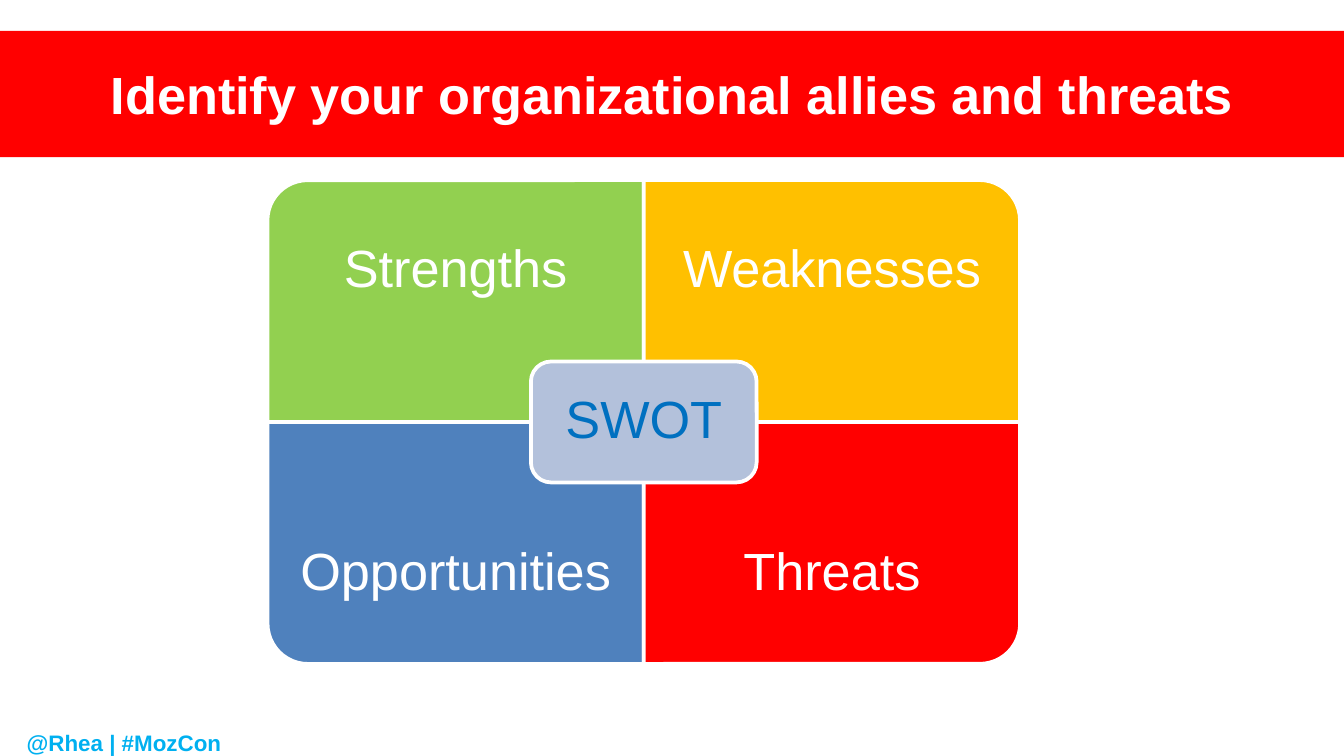
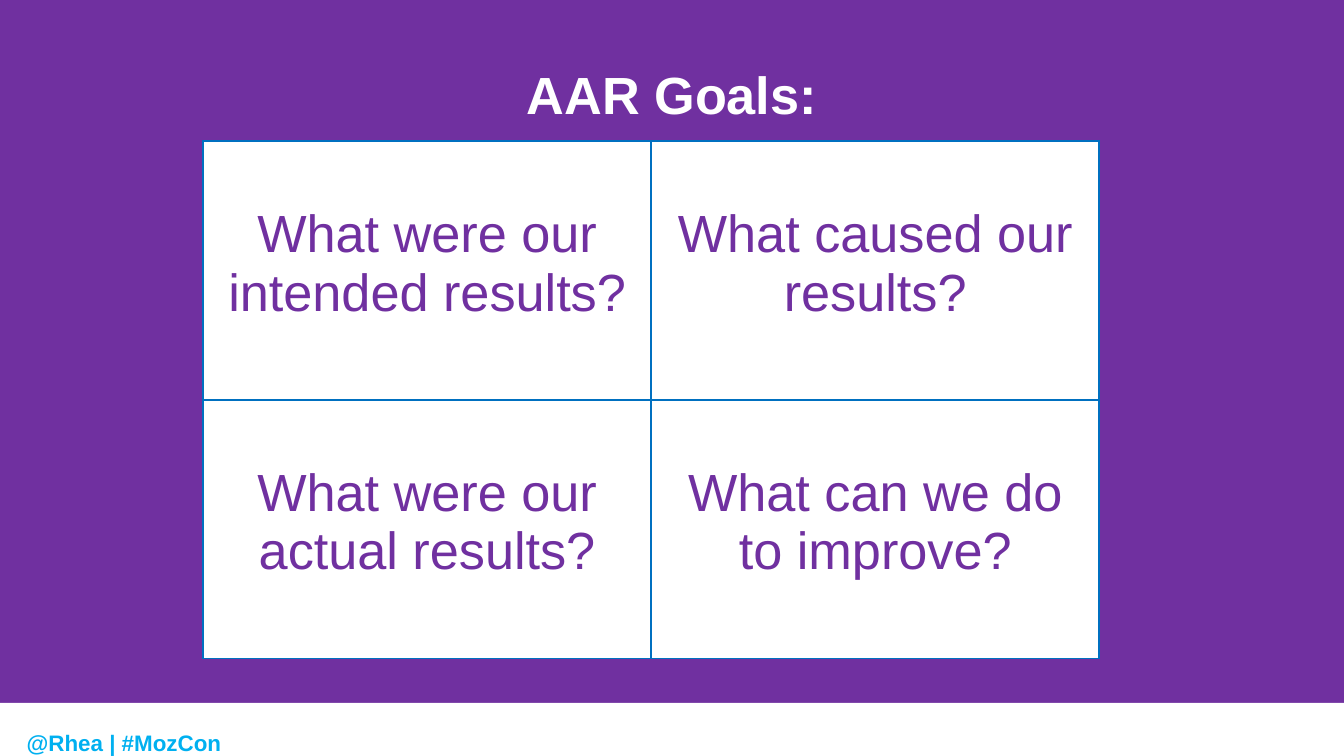
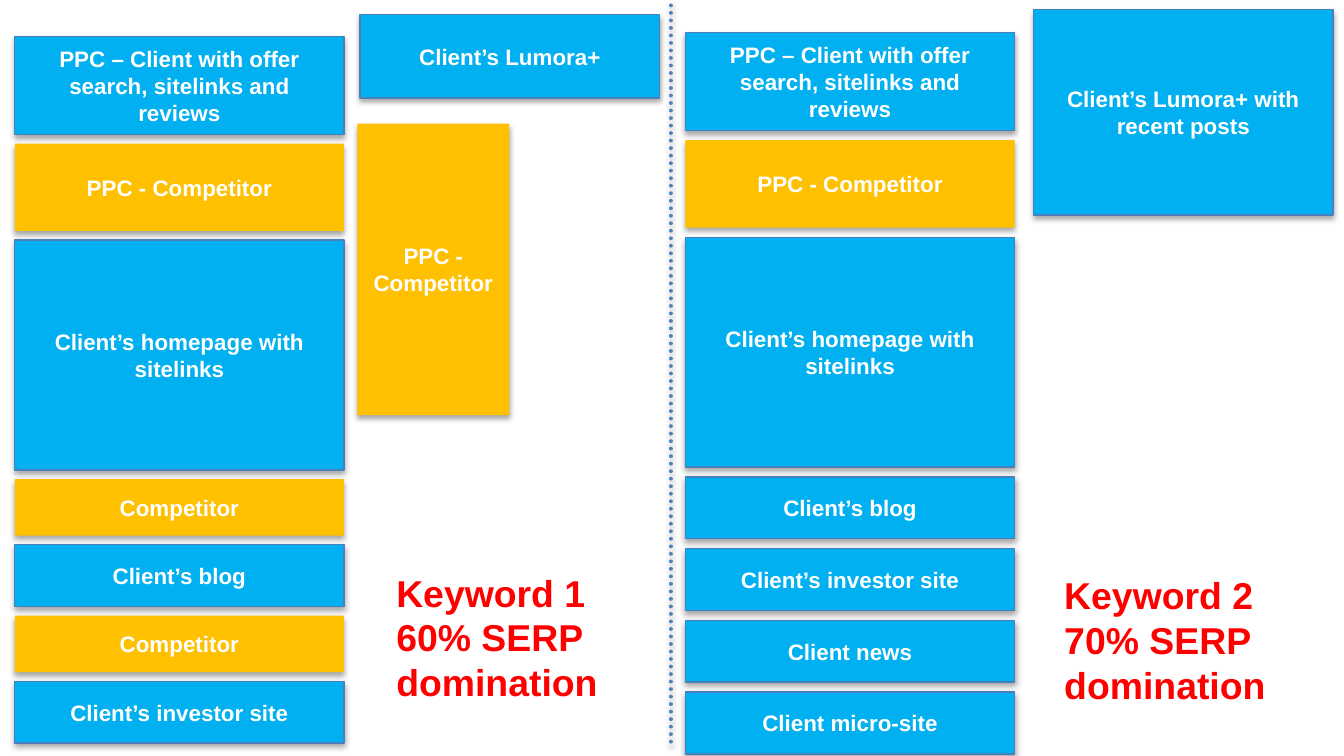
"""Build three slides: a SWOT matrix, a review-goal table and a search results comparison."""
import pptx
import pptx.dml.color
import pptx.enum.dml
import pptx.enum.shapes
import pptx.enum.text
import pptx.oxml
import pptx.oxml.ns
import pptx.util

Inches = pptx.util.Inches
Pt = pptx.util.Pt
SHAPE = pptx.enum.shapes.MSO_SHAPE
ALIGN = pptx.enum.text.PP_ALIGN
ANCHOR = pptx.enum.text.MSO_ANCHOR

COLORS = {
    "white": "FFFFFF", "red": "FF0000", "green": "92D050", "amber": "FFC000",
    "steel": "4F81BD", "mist": "B3C1DB", "blue": "0070C0", "sky": "00B0F0",
    "purple": "7030A0", "edge": "4B7EBC", "black": "000000",
}
TITLE = {"size": Pt(28), "bold": True}
BODY = {"size": Pt(28), "bold": False}
LABEL = {"size": Pt(12), "bold": True}
KEYWORD = {"size": Pt(20), "bold": True}
CENTER = {"alignment": ALIGN.CENTER}
TIGHT = {"alignment": ALIGN.CENTER, "line_spacing": 0.9}
MARGINS = ("margin_left", "margin_top", "margin_right", "margin_bottom")


def rgb(name):
    """Return the named colour."""
    return pptx.dml.color.RGBColor.from_string(COLORS[name])


def apply(obj, values):
    """Set each attribute of obj from a dict."""
    for name, value in values.items():
        setattr(obj, name, value)


def write(tf, lines, font, color, para=None, anchor=ANCHOR.MIDDLE, inset=None):
    """Write one paragraph per line into a text frame."""
    apply(tf, {"word_wrap": True, "vertical_anchor": anchor})
    if inset is not None:
        apply(tf, dict.fromkeys(MARGINS, Inches(inset)))
    for i, line in enumerate(lines):
        p = tf.add_paragraph() if i else tf.paragraphs[0]
        apply(p, para or {})
        r = p.add_run()
        r.text = line
        apply(r.font, {"name": "Arial", **font})
        r.font.color.rgb = rgb(color)


def add_text(s, box, lines, font, color, **layout):
    """Add a text box."""
    sp = s.shapes.add_textbox(*map(Inches, box))
    write(sp.text_frame, lines, font, color, **layout)


def add_block(s, box, fill, line=None, width=0.75, kind=SHAPE.RECTANGLE):
    """Add a filled preset shape with an optional outline."""
    sp = s.shapes.add_shape(kind, *map(Inches, box))
    sp.shadow.inherit = False
    sp.fill.solid()
    sp.fill.fore_color.rgb = rgb(fill)
    if line:
        sp.line.color.rgb = rgb(line)
        sp.line.width = Pt(width)
    else:
        sp.line.fill.background()
    return sp


def add_shadow(sp, dist, alpha):
    """Give a shape or connector a soft shadow below it."""
    spPr = sp._element.spPr
    for old in spPr.findall(pptx.oxml.ns.qn("a:effectLst")):
        spPr.remove(old)
    spPr.append(pptx.oxml.parse_xml(
        f'<a:effectLst {pptx.oxml.ns.nsdecls("a")}>'
        f'<a:outerShdw blurRad="{Pt(3.1)}" dist="{Pt(dist)}" dir="5400000" rotWithShape="0">'
        f'<a:srgbClr val="{COLORS["black"]}"><a:alpha val="{alpha * 1000}"/></a:srgbClr>'
        '</a:outerShdw></a:effectLst>'))


def add_slide(prs, background):
    """Add a blank slide with a plain background."""
    s = prs.slides.add_slide(prs.slide_layouts[6])
    s.background.fill.solid()
    s.background.fill.fore_color.rgb = rgb(background)
    return s


def add_title(s, text, band=None):
    """Add the centred title, on a full-width band if a colour is given."""
    if band:
        sp = add_block(s, (0, 0.23, 10, 0.94), band)
        write(sp.text_frame, [text], TITLE, "white", CENTER)
    else:
        add_text(s, (0.5, 0.23, 9, 0.94), [text], TITLE, "white", para=CENTER)


def add_footer(s):
    """Add the white footer strip."""
    sp = add_block(s, (0, 5.23, 10, 0.4), "white")
    p = sp.text_frame.paragraphs[0]
    p._p.get_or_add_pPr().set("marL", str(Inches(0.1)))
    write(sp.text_frame, ["@Rhea | #MozCon"], LABEL, "sky",
          {"alignment": ALIGN.LEFT, "line_spacing": Pt(25), "space_after": Pt(12)},
          ANCHOR.TOP)


def add_swot(s, x, y, w, h):
    """Draw four quadrants with rounded outer corners around a centre label."""
    qw, qh = w / 2, h / 2
    quadrants = [("Strengths", "green", 270), ("Weaknesses", "amber", 0),
                 ("Opportunities", "steel", 180), ("Threats", "red", 90)]
    for i, (name, fill, turn) in enumerate(quadrants):
        row, col = divmod(i, 2)
        qx, qy = x + col * qw, y + row * qh
        sw, sh = (qh, qw) if turn % 180 else (qw, qh)
        sp = add_block(s, (qx + (qw - sw) / 2, qy + (qh - sh) / 2, sw, sh),
                       fill, "white", 2, SHAPE.ROUND_1_RECTANGLE)
        sp.rotation = turn
        add_text(s, (qx, qy + row * qh / 4, qw, qh * 0.75), [name], BODY, "white",
                 para=TIGHT, inset=0.22)
    cw, ch = qw * 0.6, qh / 2
    sp = add_block(s, (x + qw - cw / 2, y + qh - ch / 2, cw, ch),
                   "mist", "white", 2, SHAPE.ROUNDED_RECTANGLE)
    write(sp.text_frame, ["SWOT"], BODY, "blue", TIGHT, inset=0.12)


def set_borders(cell, color, width):
    """Outline all four sides of a table cell."""
    tcPr = cell._tc.get_or_add_tcPr()
    for i, side in enumerate(("lnL", "lnR", "lnT", "lnB")):
        tcPr.insert(i, pptx.oxml.parse_xml(
            f'<a:{side} {pptx.oxml.ns.nsdecls("a")} w="{Pt(width)}"><a:solidFill>'
            f'<a:srgbClr val="{COLORS[color]}"/></a:solidFill></a:{side}>'))


def add_goals(s, x, y, w, h):
    """Add the two-by-two table of review questions."""
    goals = [["What were our intended results?", "What caused our results?"],
             ["What were our actual results?", "What can we do to improve?"]]
    table = s.shapes.add_table(2, 2, *map(Inches, (x, y, w, h))).table
    apply(table, {"first_row": False, "horz_banding": False})
    for i, row in enumerate(goals):
        for j, goal in enumerate(row):
            cell = table.cell(i, j)
            cell.fill.solid()
            cell.fill.fore_color.rgb = rgb("white")
            write(cell.text_frame, [goal], BODY, "purple", CENTER)
            apply(cell, {"vertical_anchor": ANCHOR.TOP, "margin_top": Inches(0.48)})
            set_borders(cell, "blue", 1)


def add_result(s, box, text, owner):
    """Add one search result block in its owner's colour."""
    fill, line = {"client": ("sky", "edge"), "rival": ("amber", None)}[owner]
    sp = add_block(s, box, fill, line)
    add_shadow(sp, 1.8, 35)
    write(sp.text_frame, [text], LABEL, "white", CENTER)


def add_results(s, x, y, w, h, results):
    """Stack results down a column with equal gaps."""
    gap = (h - sum(height for _, _, height in results)) / (len(results) - 1)
    for text, owner, height in results:
        add_result(s, (x, y, w, height), text, owner)
        y += height + gap


def add_divider(s, x, top, bottom):
    """Add the dotted vertical divider."""
    c = s.shapes.add_connector(pptx.enum.shapes.MSO_CONNECTOR.STRAIGHT,
                               *map(Inches, (x, top, x, bottom)))
    c.line.color.rgb = rgb("steel")
    apply(c.line, {"width": Pt(2), "dash_style": pptx.enum.dml.MSO_LINE.ROUND_DOT})
    c._element.spPr.find(pptx.oxml.ns.qn("a:ln")).set("cap", "rnd")
    add_shadow(c, 1.6, 38)


def swot_slide(prs):
    """Build the SWOT slide."""
    s = add_slide(prs, "white")
    add_title(s, "Identify your organizational allies and threats", "red")
    add_swot(s, 1.99, 1.34, 5.6, 3.6)
    add_footer(s)


def goals_slide(prs):
    """Build the review goals slide."""
    s = add_slide(prs, "purple")
    add_title(s, "AAR Goals:")
    add_goals(s, 1.51, 1.05, 6.67, 3.85)
    add_footer(s)


def serp_slide(prs):
    """Build the comparison of two search result pages."""
    s = add_slide(prs, "white")
    top = [("PPC – Client with offer search, sitelinks and reviews", "client", 0.73),
           ("PPC - Competitor", "rival", 0.65),
           ("Client’s homepage with sitelinks", "client", 1.71)]
    rival = ("Competitor", "rival", 0.42)
    blog, investor, news, micro = [
        (text, "client", 0.46) for text in
        ("Client’s blog", "Client’s investor site", "Client news", "Client micro-site")]
    add_results(s, 0.11, 0.27, 2.45, 5.26, top + [rival, blog, rival, investor])
    add_result(s, (2.68, 0.11, 2.23, 0.62), "Client’s Lumora+", "client")
    add_result(s, (2.66, 0.92, 1.13, 2.17), "PPC - Competitor", "rival")
    add_results(s, 5.1, 0.24, 2.45, 5.37, top + [blog, investor, news, micro])
    add_result(s, (7.69, 0.07, 2.23, 1.53), "Client’s Lumora+ with recent posts", "client")
    add_divider(s, 4.99, 0.04, 5.57)
    add_text(s, (2.85, 4.19, 2.05, 1.45), ["Keyword 1", "60% SERP domination"],
             KEYWORD, "red", anchor=ANCHOR.TOP)
    add_text(s, (7.82, 4.21, 2.05, 1.11), ["Keyword 2", "70% SERP", "domination"],
             KEYWORD, "red", anchor=ANCHOR.TOP)


def main():
    """Build and save the presentation."""
    prs = pptx.Presentation()
    apply(prs, {"slide_width": Inches(10), "slide_height": Inches(10 * 9 / 16)})
    for build in (swot_slide, goals_slide, serp_slide):
        build(prs)
    prs.save("out.pptx")


if __name__ == "__main__":
    main()
